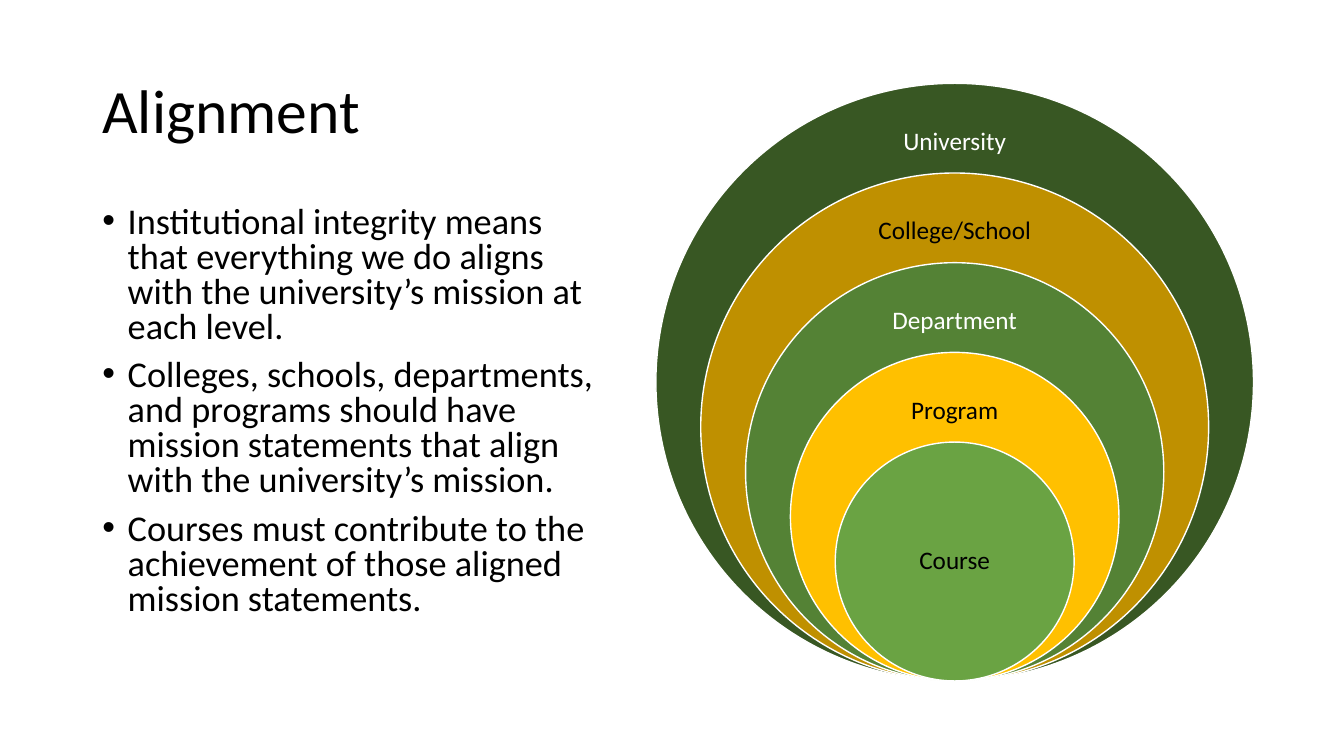
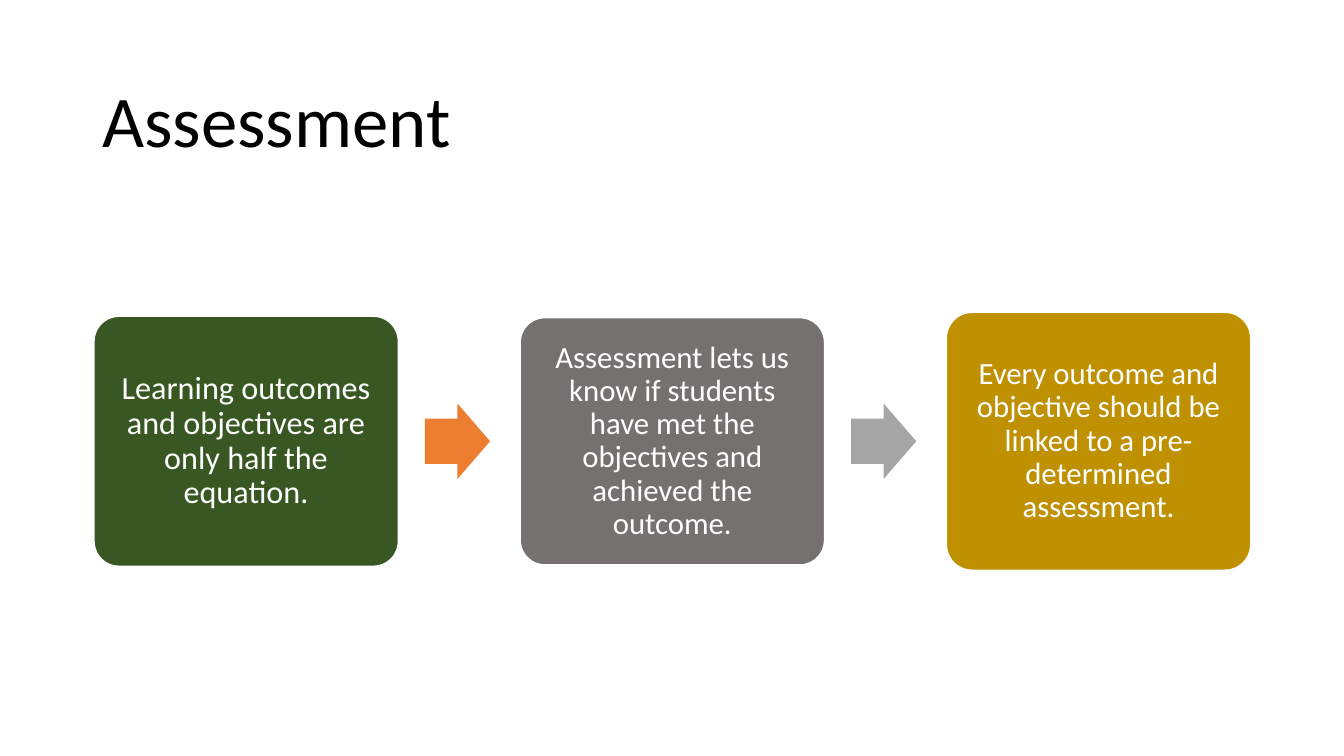
from dataclasses import dataclass

from lxml import etree
from pptx import Presentation
from pptx.dml.color import RGBColor
from pptx.enum.shapes import MSO_SHAPE
from pptx.enum.text import MSO_ANCHOR, PP_ALIGN
from pptx.oxml.ns import qn
from pptx.util import Cm, Pt

OVAL = MSO_SHAPE.OVAL
ROUND = MSO_SHAPE.ROUNDED_RECTANGLE
ARROW = MSO_SHAPE.RIGHT_ARROW
TOP, MID = MSO_ANCHOR.TOP, MSO_ANCHOR.MIDDLE
LEFT, CENTER = PP_ALIGN.LEFT, PP_ALIGN.CENTER


@dataclass(frozen=True)
class Theme:
    font: str = "Calibri"
    black: str = "000000"
    white: str = "FFFFFF"
    forest: str = "385723"
    gold: str = "BF9000"
    green: str = "548235"
    yellow: str = "FFC000"
    leaf: str = "6AA343"
    orange: str = "ED7D31"
    stone: str = "767171"
    silver: str = "A5A5A5"
    body: float = 25.9
    label: int = 18


THEME = Theme()


def color(code):
    return RGBColor.from_string(code)


def write(shape, *texts, size, ink=THEME.black, align=LEFT, anchor=MID,
          pad=(0.25, 0.13), lead=0.9, gap=0, bullet=False):
    """Fill a shape with paragraphs; pad is the side and top inset in cm."""
    frame = shape.text_frame
    frame.word_wrap = True
    frame.vertical_anchor = anchor
    frame.margin_left = frame.margin_right = Cm(pad[0])
    frame.margin_top = frame.margin_bottom = Cm(pad[1])
    for i, text in enumerate(texts):
        para = frame.add_paragraph() if i else frame.paragraphs[0]
        para.alignment = align
        para.line_spacing = lead
        para.space_before = Pt(gap if i else 0)
        if bullet:
            props = para._p.get_or_add_pPr()
            props.set("marL", str(Cm(0.64)))
            props.set("indent", str(Cm(-0.64)))
            etree.SubElement(props, qn("a:buFont")).set("typeface", "Arial")
            etree.SubElement(props, qn("a:buChar")).set("char", "•")
        run = para.add_run()
        run.text = text
        run.font.name = THEME.font
        run.font.size = Pt(size)
        run.font.color.rgb = color(ink)


class Deck:
    def __init__(self):
        self.file = Presentation()
        self.file.slide_width = Cm(33.87)
        self.file.slide_height = Cm(19.05)
        self.slide = None

    def page(self, title, top, high, size):
        self.slide = self.file.slides.add_slide(self.file.slide_layouts[6])
        self.text(title, box=(2.33, top, 29.21, high), size=size)

    def text(self, *texts, box, **style):
        area = self.slide.shapes.add_textbox(*map(Cm, box))
        write(area, *texts, **style)

    def shape(self, kind, box, fill, edge=None, adjust=()):
        item = self.slide.shapes.add_shape(kind, *map(Cm, box))
        item.shadow.inherit = False
        for i, value in enumerate(adjust):
            item.adjustments[i] = value
        item.fill.solid()
        item.fill.fore_color.rgb = color(fill)
        if edge:
            item.line.color.rgb = color(edge)
            item.line.width = Pt(1)
        else:
            item.line.fill.background()
        return item

    def rings(self, items, mid, base, wide, step):
        """Nested circles that share their lowest point."""
        for i, (name, fill, ink) in enumerate(items):
            size = wide - i * step
            top = base - size
            self.shape(OVAL, (mid - size / 2, top, size, size), fill,
                       edge=THEME.white)
            last = i == len(items) - 1
            spot = top + (size / 2 if last else 1.48)
            self.text(name, box=(mid - 2.8, spot - 0.75, 5.6, 1.5),
                      size=THEME.label, ink=ink, align=CENTER,
                      pad=(0.36, 0.1))

    def steps(self, items, arrows, left, mid, wide, pitch):
        """Cards in a row with an arrow in each gap."""
        for i, (text, fill, high, size) in enumerate(items):
            card = self.shape(ROUND, (left + i * pitch, mid - high / 2, wide, high),
                              fill, edge=THEME.white, adjust=(0.1,))
            write(card, text, size=size, ink=THEME.white, align=CENTER,
                  pad=(0.24, 0.24))
        for i, fill in enumerate(arrows):
            self.shape(ARROW, (left + i * pitch + 8.34, mid - 0.95, 1.64, 1.9),
                       fill, adjust=(0.6, 0.5))


def main():
    deck = Deck()

    # Alignment: bullets and nested levels
    deck.page("Alignment", 1.02, 3.68, 44)
    deck.text(
        "Institutional integrity means that everything we do aligns with the "
        "university’s mission at each level.",
        "Colleges, schools, departments, and programs should have mission "
        "statements that align with the university’s mission.",
        "Courses must contribute to the achievement of those aligned mission "
        "statements.",
        box=(2.33, 5.08, 13.03, 11.4), size=THEME.body, anchor=TOP,
        lead=0.8, gap=10, bullet=True)
    deck.rings([
        ("University", THEME.forest, THEME.white),
        ("College/School", THEME.gold, THEME.black),
        ("Department", THEME.green, THEME.white),
        ("Program", THEME.yellow, THEME.black),
        ("Course", THEME.leaf, THEME.black),
    ], mid=24.06, base=17.16, wide=15.06, step=2.26)

    # Assessment: three steps
    deck.page("Assessment", 1.55, 3.15, 52)
    deck.steps([
        ("Learning outcomes and objectives are only half the equation.",
         THEME.forest, 6.3, 23),
        ("Assessment lets us know if students have met the objectives and "
         "achieved the outcome.", THEME.stone, 6.23, 22),
        ("Every outcome and objective should be linked to a pre-determined "
         "assessment.", THEME.gold, 6.5, 22),
    ], arrows=(THEME.orange, THEME.silver),
        left=2.37, mid=11.12, wide=7.67, pitch=10.74)

    deck.file.save("out.pptx")


if __name__ == "__main__":
    main()
